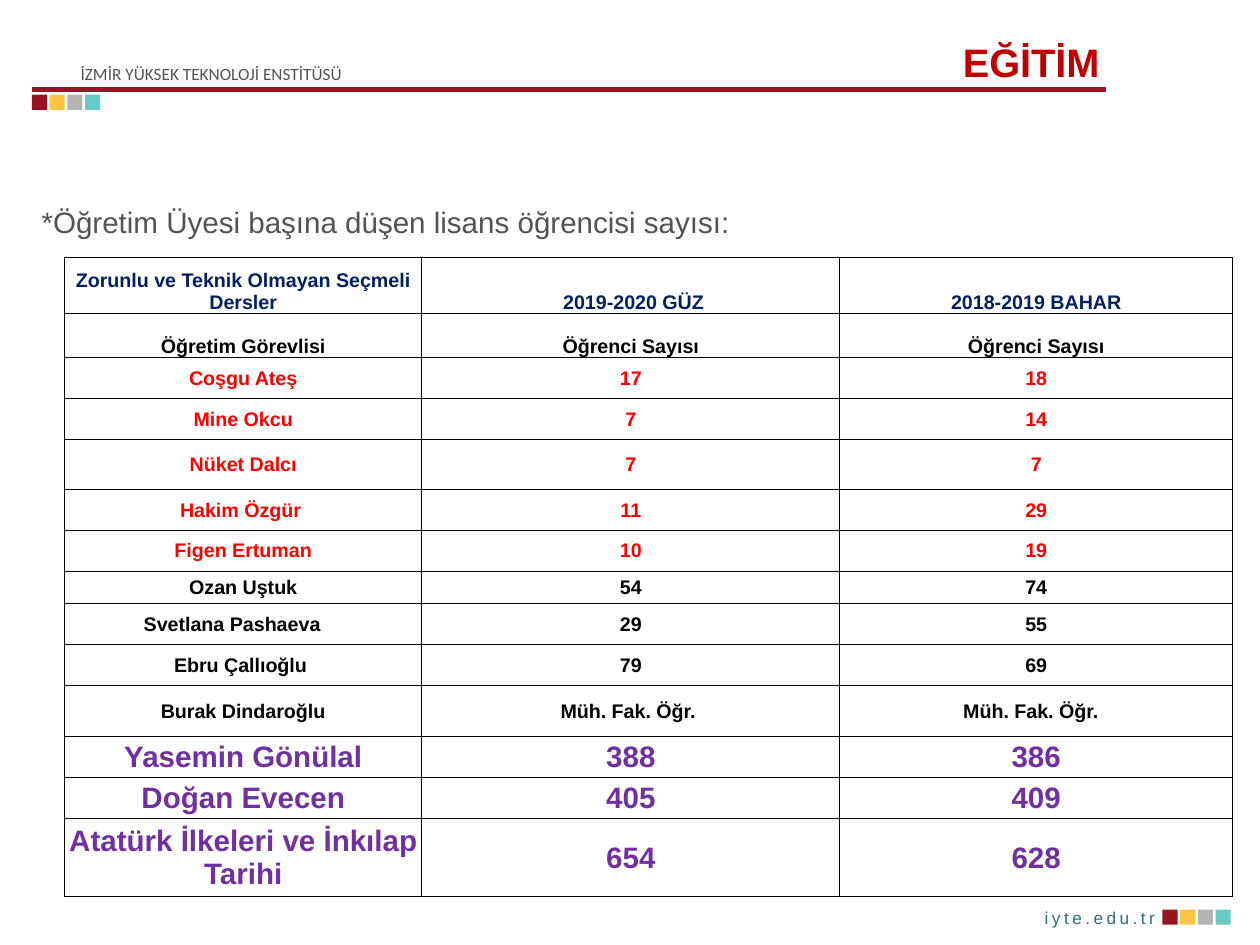
from collections import namedtuple
from dataclasses import dataclass

from lxml import etree
from pptx import Presentation
from pptx.dml.color import RGBColor
from pptx.enum.shapes import MSO_CONNECTOR, MSO_SHAPE
from pptx.enum.text import MSO_ANCHOR, PP_ALIGN
from pptx.oxml.ns import qn
from pptx.util import Inches, Pt

RECTANGLE = MSO_SHAPE.RECTANGLE
STRAIGHT = MSO_CONNECTOR.STRAIGHT
LEFT, CENTER, RIGHT = PP_ALIGN.LEFT, PP_ALIGN.CENTER, PP_ALIGN.RIGHT
TOP, MIDDLE, BOTTOM = MSO_ANCHOR.TOP, MSO_ANCHOR.MIDDLE, MSO_ANCHOR.BOTTOM

Box = namedtuple("Box", "left top width height")


@dataclass(frozen=True)
class Theme:
    body_font: str = "Arial"
    header_font: str = "Calibri"
    maroon: str = "9A1320"
    yellow: str = "FEC444"
    silver: str = "B4B5B4"
    teal: str = "66CAC5"
    gray: str = "535353"
    web: str = "306D7E"
    title: str = "C00000"
    navy: str = "002060"
    black: str = "000000"
    red: str = "FF0000"
    purple: str = "7030A0"
    small: float = 14
    cell: float = 16
    large: float = 24
    heading: float = 32.3


THEME = Theme()

# Each row: height, colour, type size, cell texts
COURSE_ROWS = [
    (0.63, THEME.navy, THEME.cell,
     ("Zorunlu ve Teknik Olmayan Seçmeli Dersler", "2019-2020 GÜZ", "2018-2019 BAHAR")),
    (0.5, THEME.black, THEME.cell, ("Öğretim Görevlisi", "Öğrenci Sayısı", "Öğrenci Sayısı")),
    (0.46, THEME.red, THEME.cell, ("Coşgu Ateş", "17", "18")),
    (0.46, THEME.red, THEME.cell, ("Mine Okcu", "7", "14")),
    (0.57, THEME.red, THEME.cell, ("Nüket Dalcı", "7", "7")),
    (0.46, THEME.red, THEME.cell, ("Hakim Özgür", "11", "29")),
    (0.46, THEME.red, THEME.cell, ("Figen Ertuman", "10", "19")),
    (0.37, THEME.black, THEME.cell, ("Ozan Uştuk", "54", "74")),
    (0.46, THEME.black, THEME.cell, ("Svetlana Pashaeva", "29", "55")),
    (0.46, THEME.black, THEME.cell, ("Ebru Çallıoğlu", "79", "69")),
    (0.58, THEME.black, THEME.cell, ("Burak Dindaroğlu", "Müh. Fak. Öğr.", "Müh. Fak. Öğr.")),
    (0.46, THEME.purple, THEME.large, ("Yasemin Gönülal", "388", "386")),
    (0.46, THEME.purple, THEME.large, ("Doğan Evecen", "405", "409")),
    (0.89, THEME.purple, THEME.large, ("Atatürk İlkeleri ve İnkılap Tarihi", "654", "628")),
]
COLUMN_SHARES = (4.03, 4.72, 4.43)
HEADING_ROWS = 2

# Wider margins that shift single cells off centre
CELL_MARGINS = {
    (0, 1): {"margin_left": 0.07},
    (5, 0): {"margin_right": 0.07},
    (8, 0): {"margin_right": 0.26},
    (9, 0): {"margin_right": 0.07},
    (10, 1): {"margin_right": 0.07},
    (10, 2): {"margin_right": 0.13},
}


def apply(target, formats):
    for name, value in formats.items():
        setattr(target, name, value)


def write(para, text, size, color, font=THEME.body_font, bold=False, align=LEFT, spacing=1.0):
    apply(para, {"alignment": align, "line_spacing": spacing})
    span = para.add_run()
    span.text = text
    apply(span.font, {"name": font, "size": Pt(size), "bold": bold})
    span.font.color.rgb = RGBColor.from_string(color)
    return span


def add_text(page, box, text, size, color, anchor=TOP, wrap=True, margins=None, **formats):
    frame = page.shapes.add_textbox(*map(Inches, box)).text_frame
    insets = dict.fromkeys(("margin_left", "margin_right", "margin_top", "margin_bottom"), 0.05)
    insets.update(margins or {})
    apply(frame, {name: Inches(value) for name, value in insets.items()})
    apply(frame, {"word_wrap": wrap, "vertical_anchor": anchor})
    return write(frame.paragraphs[0], text, size, color, **formats)


def add_squares(page, box):
    """Four brand colours at equal steps across the box."""
    step = (box.width - box.height) / 3
    colors = (THEME.maroon, THEME.yellow, THEME.silver, THEME.teal)
    for index, color in enumerate(colors):
        place = Box(box.left + index * step, box.top, box.height, box.height)
        square = page.shapes.add_shape(RECTANGLE, *map(Inches, place))
        square.shadow.inherit = False
        square.fill.solid()
        square.fill.fore_color.rgb = RGBColor.from_string(color)
        square.line.fill.background()


def add_header(page, box):
    # Institution name, centred above the rule
    add_text(page, Box(box.left - 0.36, box.top + 0.19, 4.77, 0.32),
             "İZMİR YÜKSEK TEKNOLOJİ ENSTİTÜSÜ", THEME.small, THEME.gray,
             font=THEME.header_font, align=CENTER)
    # Rule
    rule_top = Inches(box.top + 0.54)
    rule = page.shapes.add_connector(STRAIGHT, Inches(box.left), rule_top,
                                     Inches(box.left + box.width), rule_top)
    rule.line.color.rgb = RGBColor.from_string(THEME.maroon)
    rule.line.width = Pt(4)
    etree.SubElement(rule._element.spPr, qn("a:effectLst"))
    add_squares(page, Box(box.left, box.top + 0.6, 0.77, 0.17))
    # Title at the right end
    add_text(page, Box(box.left + box.width - 1.83, box.top, 1.81, 0.53), "EĞİTİM",
             THEME.heading, THEME.title, anchor=MIDDLE, margins={"margin_top": 0.1},
             bold=True, align=RIGHT, spacing=0.7)


def add_footer(page, box):
    address = add_text(page, Box(box.left, box.top, 1.42, box.height), "iyte.edu.tr",
                       THEME.small, THEME.web, wrap=False)
    address._r.get_or_add_rPr().set("spc", "280")
    add_squares(page, Box(box.left + box.width - 0.77, box.top + 0.08, 0.77, 0.17))


def add_statement(page, box):
    add_text(page, box, "*Öğretim Üyesi başına düşen lisans öğrencisi sayısı:",
             THEME.large, THEME.gray, anchor=MIDDLE, margins={"margin_bottom": 0.82},
             spacing=1.5)


def add_borders(cell):
    properties = cell._tc.get_or_add_tcPr()
    for side in ("lnL", "lnR", "lnT", "lnB"):
        line = etree.SubElement(properties, qn(f"a:{side}"), w=str(Pt(1)))
        fill = etree.SubElement(line, qn("a:solidFill"))
        etree.SubElement(fill, qn("a:srgbClr"), val=THEME.black)


def add_course_table(page, box):
    table = page.shapes.add_table(len(COURSE_ROWS), len(COLUMN_SHARES),
                                  *map(Inches, box)).table
    apply(table, {"first_row": False, "horz_banding": False})
    for column, share in zip(table.columns, COLUMN_SHARES):
        column.width = Inches(box.width * share / sum(COLUMN_SHARES))
    for row_index, (height, color, size, texts) in enumerate(COURSE_ROWS):
        table.rows[row_index].height = Inches(height)
        for column_index, text in enumerate(texts):
            cell = table.cell(row_index, column_index)
            margins = {"margin_left": 0.01, "margin_right": 0.01,
                       "margin_top": 0.01, "margin_bottom": 0}
            margins.update(CELL_MARGINS.get((row_index, column_index), {}))
            apply(cell, {name: Inches(value) for name, value in margins.items()})
            cell.vertical_anchor = BOTTOM if row_index < HEADING_ROWS else MIDDLE
            add_borders(cell)
            cell.fill.background()
            write(cell.text_frame.paragraphs[0], text, size, color, bold=True, align=CENTER)


def main():
    deck = Presentation()
    apply(deck, {"slide_width": Inches(14.22), "slide_height": Inches(10.67)})
    page = deck.slides.add_slide(deck.slide_layouts[6])
    add_header(page, Box(0.36, 0.47, 12.12, 0.77))
    add_footer(page, Box(11.74, 10.19, 2.15, 0.32))
    add_statement(page, Box(0.42, 0, 13.5, 5.57))
    add_course_table(page, Box(0.73, 2.91, 13.18, 7.22))
    deck.save("out.pptx")


if __name__ == "__main__":
    main()
